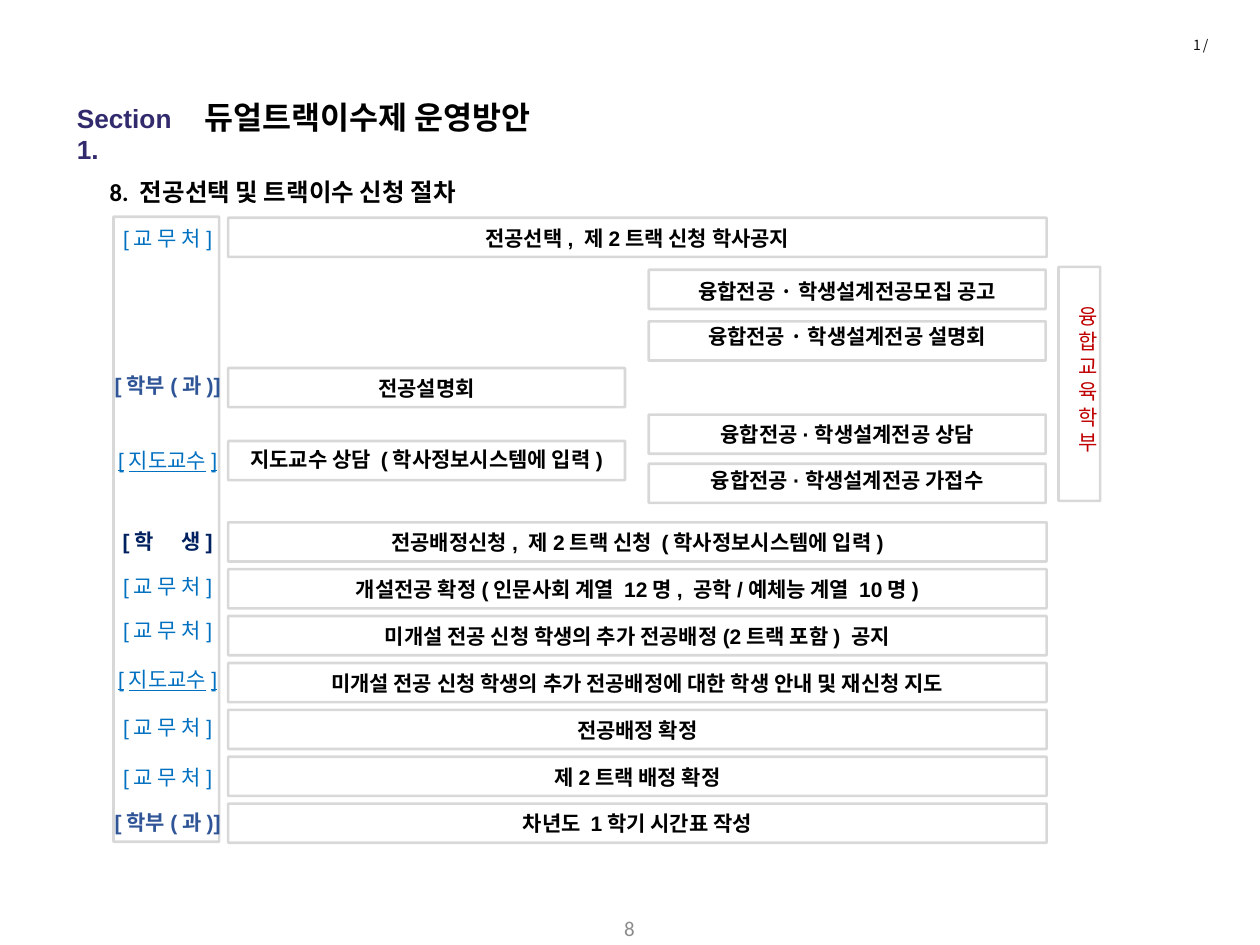
import pptx
import pptx.util
import pptx.dml.color
import pptx.enum.shapes
import pptx.enum.text
import pptx.oxml
import pptx.oxml.ns

Cm = pptx.util.Cm
Pt = pptx.util.Pt
RGBColor = pptx.dml.color.RGBColor
ALIGN = pptx.enum.text.PP_ALIGN
ANCHOR = pptx.enum.text.MSO_ANCHOR

BLACK = RGBColor(0x00, 0x00, 0x00)
WHITE = RGBColor(0xFF, 0xFF, 0xFF)
GRAY = RGBColor(0x80, 0x80, 0x80)
PAGE_GRAY = RGBColor(0x8C, 0x8C, 0x8C)
COUNTER = RGBColor(0x0D, 0x0D, 0x0D)
BLUE = RGBColor(0x00, 0x70, 0xC0)
STEEL = RGBColor(0x2F, 0x55, 0x97)
NAVY = RGBColor(0x00, 0x20, 0x60)
RED = RGBColor(0xC0, 0x00, 0x00)
PURPLE = RGBColor(0x31, 0x2A, 0x6D)

NOTO = "Noto Sans CJK KR"
WIDE, HALF, ROW_H = 16.5, 8.0, 0.79
LEFT, RIGHT = 4.6, 13.08
LOWER_TOP, LOWER_STEP = 10.53, 0.945

OFFICE = ("[교 무 처]", BLUE, False, False)
DEPARTMENT = ("[학부(과)]", STEEL, True, False)
ADVISOR = ("[지도교수]", BLUE, False, True)
STUDENT = (("[학", " ", "생]"), NAVY, True, False)

LABELS = [
    (4.42, OFFICE), (7.39, DEPARTMENT), (8.89, ADVISOR), (10.54, STUDENT),
    (11.43, OFFICE), (12.32, OFFICE), (13.31, ADVISOR), (14.27, OFFICE),
    (15.29, OFFICE), (16.2, DEPARTMENT),
]

# left, top, width, text offset, runs with an optional font
UPPER_STEPS = [
    (LEFT, 4.39, WIDE, 0.03, [("전공선택, 제2트랙 신청 학사공지", None)]),
    (RIGHT, 5.44, HALF, 0.05,
     [("융합전공", None), ("·학생설계전공모집 공고", NOTO)]),
    (RIGHT, 6.48, HALF, -0.08,
     [("융합전공", None), ("·", NOTO), ("학생설계전공 설명회", None)]),
    (LEFT, 7.42, HALF, 0.03, [("전공설명회", None)]),
    (RIGHT, 8.36, HALF, 0, [("융합전공·학생설계전공 상담", None)]),
    (LEFT, 8.89, HALF, -0.02, [("지도교수 상담 (학사정보시스템에 입력)", None)]),
    (RIGHT, 9.35, HALF, -0.05, [("융합전공·학생설계전공 가접수", None)]),
]

LOWER_STEPS = [
    "전공배정신청, 제2트랙 신청 (학사정보시스템에 입력)",
    "개설전공 확정(인문사회 계열 12명, 공학/예체능 계열 10명)",
    "미개설 전공 신청 학생의 추가 전공배정(2트랙 포함) 공지",
    "미개설 전공 신청 학생의 추가 전공배정에 대한 학생 안내 및 재신청 지도",
    "전공배정 확정",
    "제2트랙 배정 확정",
    "차년도 1학기 시간표 작성",
]


def set_font(font, size, color, name="Arial", bold=False, underline=False):
    font.size = Pt(size)
    font.name = name
    font.bold = bold
    font.underline = underline
    font.color.rgb = color


def set_spacing(r, points):
    r._r.get_or_add_rPr().set("spc", str(int(points * 100)))


def add_text(s, left, top, width, height, lines, size, color,
             align=ALIGN.LEFT, **font):
    sp = s.shapes.add_textbox(Cm(left), Cm(top), Cm(width), Cm(height))
    tf = sp.text_frame
    tf.word_wrap = True
    for i, runs in enumerate(lines):
        p = tf.add_paragraph() if i else tf.paragraphs[0]
        p.alignment = align
        for text in runs:
            p.add_run().text = text
        set_font(p.font, size, color, **font)
    return sp


def add_rect(s, left, top, width, height):
    sp = s.shapes.add_shape(pptx.enum.shapes.MSO_SHAPE.RECTANGLE,
                            Cm(left), Cm(top), Cm(width), Cm(height))
    sp.shadow.inherit = False
    return sp


def add_frame(s, left, top, width, height):
    """Unfilled rectangle with a translucent gray outline."""
    sp = add_rect(s, left, top, width, height)
    sp.fill.background()
    sp.line.color.rgb = GRAY
    sp.line.width = Pt(1.5)
    clr = sp.line._ln.find(".//" + pptx.oxml.ns.qn("a:srgbClr"))
    clr.append(pptx.oxml.parse_xml(
        '<a:alpha %s val="30000"/>' % pptx.oxml.ns.nsdecls("a")))
    return sp


def add_step(s, left, top, width, offset, runs):
    tf = add_frame(s, left, top, width, ROW_H).text_frame
    tf.word_wrap = True
    tf.vertical_anchor = ANCHOR.TOP
    tf.margin_top = Cm(0.13 + offset)
    tf.margin_bottom = 0
    p = tf.paragraphs[0]
    p.alignment = ALIGN.CENTER
    set_font(p.font, 12, BLACK, bold=True)
    for text, name in runs:
        r = p.add_run()
        r.text = text
        set_font(r.font, 12, BLACK, name or "Arial", bold=True)


def add_label(s, top, label):
    text, color, bold, underline = label
    runs = [text] if isinstance(text, str) else text
    sp = add_text(s, 1.88, top, 3.0, 0.76, [runs], 12, color, ALIGN.CENTER,
                  bold=bold, underline=underline)
    for r in sp.text_frame.paragraphs[0].runs:
        if r.text == " ":
            set_spacing(r, 13)


def add_heading(s, text):
    sp = add_rect(s, 1.96, 3.25, 9.55, 0.94)
    sp.fill.solid()
    sp.fill.fore_color.rgb = WHITE
    sp.line.color.rgb = WHITE
    sp.line.width = Pt(0.75)
    tf = sp.text_frame
    tf.word_wrap = True
    tf.vertical_anchor = ANCHOR.MIDDLE
    p = tf.paragraphs[0]
    p.text = text
    p.alignment = ALIGN.LEFT
    p.line_spacing = 1.5
    set_font(p.font, 14, BLACK, "Calibri", bold=True)


def main():
    prs = pptx.Presentation()
    prs.slide_width, prs.slide_height = Cm(25.4), Cm(19.05)
    s = prs.slides.add_slide(prs.slide_layouts[6])

    # Page marks
    sp = add_text(s, 9.83, 18.36, 5.72, 0.69, [["8"]], 12, PAGE_GRAY,
                  ALIGN.CENTER, name="Calibri")
    sp.text_frame.vertical_anchor = ANCHOR.MIDDLE
    sp = add_text(s, 20.22, 0.61, 4.39, 0.61, [["1 /"]], 8, COUNTER,
                  ALIGN.RIGHT, name=NOTO)
    set_spacing(sp.text_frame.paragraphs[0].runs[0], -0.3)

    # Titles
    add_heading(s, "8. 전공선택 및 트랙이수 신청 절차")
    sp = add_text(s, 3.87, 1.93, 21, 1.55, [["듀얼트랙이수제 운영방안"]],
                  18, BLACK, bold=True)
    sp.text_frame.paragraphs[0].line_spacing = 0.9
    add_text(s, 1.3, 1.93, 2.97, 0.89, [["Section 1."]], 15, PURPLE, bold=True)

    # Responsible units
    add_frame(s, 2.29, 4.37, 2.13, 12.6)
    for top, label in LABELS:
        add_label(s, top, label)

    # Procedure steps
    for step in UPPER_STEPS:
        add_step(s, *step)
    for i, text in enumerate(LOWER_STEPS):
        add_step(s, LEFT, LOWER_TOP + i * LOWER_STEP, WIDE, 0.02,
                 [(text, None)])

    # Vertical unit name
    add_frame(s, 21.34, 5.38, 0.84, 4.72)
    add_text(s, 21.49, 5.99, 0.61, 3.33, [[c] for c in "융합교육학부"],
             12, RED, ALIGN.CENTER)

    prs.save("out.pptx")


if __name__ == "__main__":
    main()
